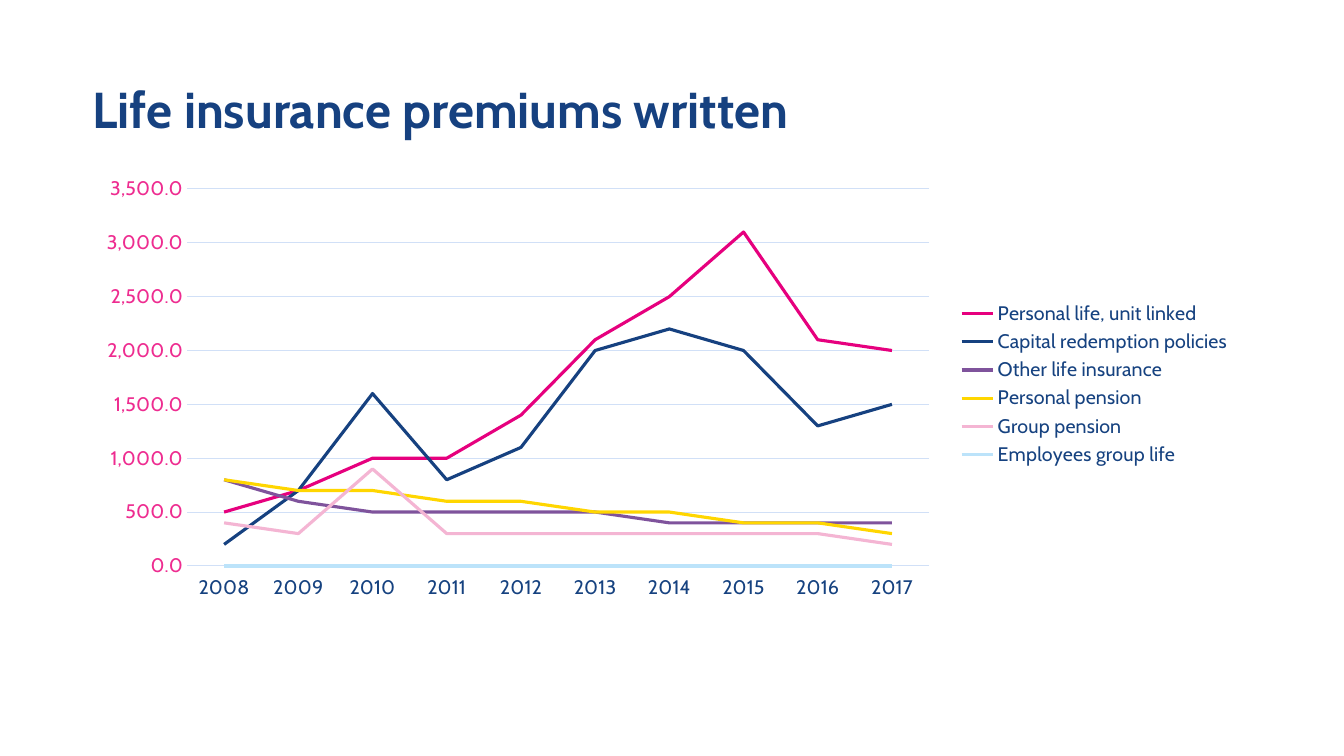
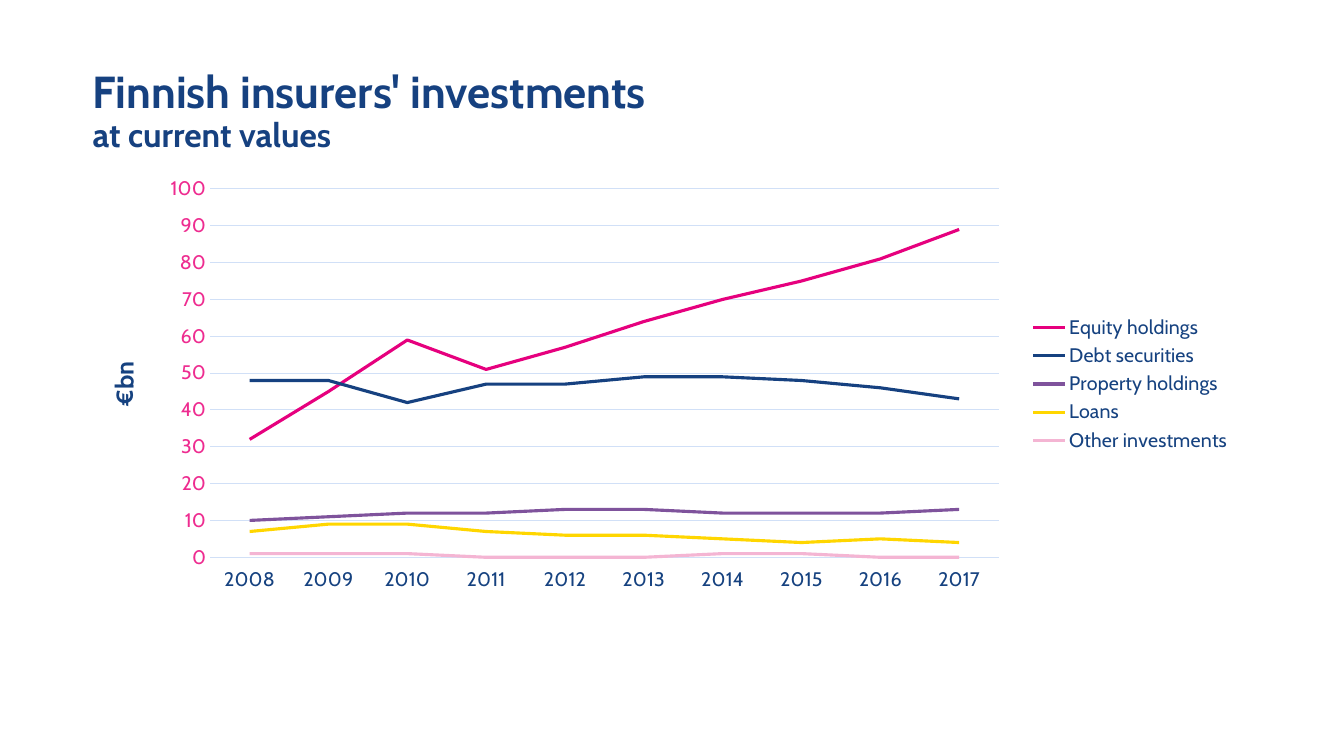
from lxml import etree
from pptx import Presentation
from pptx.chart.data import CategoryChartData
from pptx.dml.color import RGBColor
from pptx.enum.chart import (XL_CHART_TYPE, XL_LEGEND_POSITION,
                             XL_TICK_LABEL_POSITION, XL_TICK_MARK)
from pptx.enum.text import MSO_ANCHOR
from pptx.oxml.ns import qn
from pptx.util import Inches, Pt

FACE = "Cabin"
COLORS = {"title": "164180", "text": "164280", "value": "EE2C90", "grid": "D1E0F7"}
LINES = ["E6007E", "164180", "7F539C", "FFD600", "F4B5D3", "BCE3FA"]
YEARS = [str(year) for year in range(2008, 2018)]
LEFT, WIDTH = Inches(0.82), Inches(11.5)
TITLE = LEFT, Inches(0.39), WIDTH, Inches(1.45)
CHART = LEFT, Inches(1.66), WIDTH, Inches(4.3)

PREMIUMS = {
    "Personal life, unit linked": [500, 700, 1000, 1000, 1400, 2100, 2500, 3100, 2100, 2000],
    "Capital redemption policies": [200, 700, 1600, 800, 1100, 2000, 2200, 2000, 1300, 1500],
    "Other life insurance": [800, 600, 500, 500, 500, 500, 400, 400, 400, 400],
    "Personal pension": [800, 700, 700, 600, 600, 500, 500, 400, 400, 300],
    "Group pension": [400, 300, 900, 300, 300, 300, 300, 300, 300, 200],
    "Employees group life": [0] * len(YEARS),
}
ASSETS = {
    "Equity holdings": [32, 45, 59, 51, 57, 64, 70, 75, 81, 89],
    "Debt securities": [48, 48, 42, 47, 47, 49, 49, 48, 46, 43],
    "Property holdings": [10, 11, 12, 12, 13, 13, 12, 12, 12, 13],
    "Loans": [7, 9, 9, 7, 6, 6, 5, 4, 5, 4],
    "Other investments": [1, 1, 1, 0, 0, 0, 1, 1, 0, 0],
}


def style(font, size, color, bold=False):
    font.name, font.size, font.bold = FACE, Pt(size), bold
    font.color.rgb = RGBColor.from_string(color)


def stroke(line, color, width):
    line.color.rgb = RGBColor.from_string(color)
    line.width = Pt(width)


def add_title(slide, box, text, size, sub=None):
    frame = slide.shapes.add_textbox(*box).text_frame
    frame.word_wrap = True
    frame.vertical_anchor = MSO_ANCHOR.MIDDLE
    para = frame.paragraphs[0]
    para.line_spacing = 0.9
    style(para.font, size, COLORS["title"], True)
    para.add_run().text = text
    if sub:
        para.add_line_break()
        run = para.add_run()
        run.text = sub
        run.font.size = Pt(24)


def place_plot(chart, area):
    """Fix the inner plot area; area is x, y, w, h as shares of the chart."""
    plot = chart.element.find(".//" + qn("c:plotArea"))
    for old in plot.findall(qn("c:layout")):
        plot.remove(old)
    layout = etree.Element(qn("c:layout"))
    plot.insert(0, layout)
    manual = etree.SubElement(layout, qn("c:manualLayout"))
    items = [("layoutTarget", "inner"), ("xMode", "edge"), ("yMode", "edge")]
    for tag, val in items + list(zip("xywh", area)):
        etree.SubElement(manual, qn("c:" + tag)).set("val", str(val))


def style_axes(chart, top, step, form, unit):
    years, scale = chart.category_axis, chart.value_axis
    for axis, color in ((years, "text"), (scale, "value")):
        axis.major_tick_mark = axis.minor_tick_mark = XL_TICK_MARK.NONE
        style(axis.tick_labels.font, 14, COLORS[color])
    years.tick_label_position = XL_TICK_LABEL_POSITION.LOW
    stroke(years.format.line, COLORS["grid"], 0.75)
    scale.minimum_scale, scale.maximum_scale = 0, top
    scale.major_unit = step
    scale.format.line.fill.background()
    stroke(scale.major_gridlines.format.line, COLORS["grid"], 0.75)
    scale.tick_labels.number_format = form
    scale.tick_labels.number_format_is_linked = False
    scale.has_title = bool(unit)
    if unit:
        para = scale.axis_title.text_frame.paragraphs[0]
        para.add_run().text = unit
        style(para.font, 18, COLORS["text"], True)
        style(para.runs[0].font, 18, COLORS["text"], True)


def add_lines(slide, box, rows, area, top, step, form, unit=None):
    data = CategoryChartData(number_format=form)
    data.categories = YEARS
    for name, vals in rows.items():
        data.add_series(name, vals)
    chart = slide.shapes.add_chart(XL_CHART_TYPE.LINE, *box, data).chart
    style(chart.font, 14, COLORS["text"])
    chart.has_title = False
    chart.has_legend = True
    chart.legend.position = XL_LEGEND_POSITION.RIGHT
    chart.legend.include_in_layout = False
    style(chart.legend.font, 14, COLORS["text"])
    chart.plots[0].vary_by_categories = False
    for series, color in zip(chart.plots[0].series, LINES):
        series.smooth = False
        stroke(series.format.line, color, 2.25)
    style_axes(chart, top, step, form, unit)
    place_plot(chart, area)


def main():
    deck = Presentation()
    deck.slide_width, deck.slide_height = Inches(13.33), Inches(7.5)
    blank = deck.slide_layouts[6]

    slide = deck.slides.add_slide(blank)
    add_title(slide, TITLE, "Life insurance premiums written", 36)
    add_lines(slide, CHART, PREMIUMS, (0.09, 0.05, 0.64, 0.87), 3500, 500, "#,##0.0")

    slide = deck.slides.add_slide(blank)
    add_title(slide, TITLE, "Finnish insurers' investments", 32, "at current values")
    add_lines(slide, CHART, ASSETS, (0.11, 0.05, 0.68, 0.85), 100, 10, "0", "€bn")

    deck.save("out.pptx")


if __name__ == "__main__":
    main()
